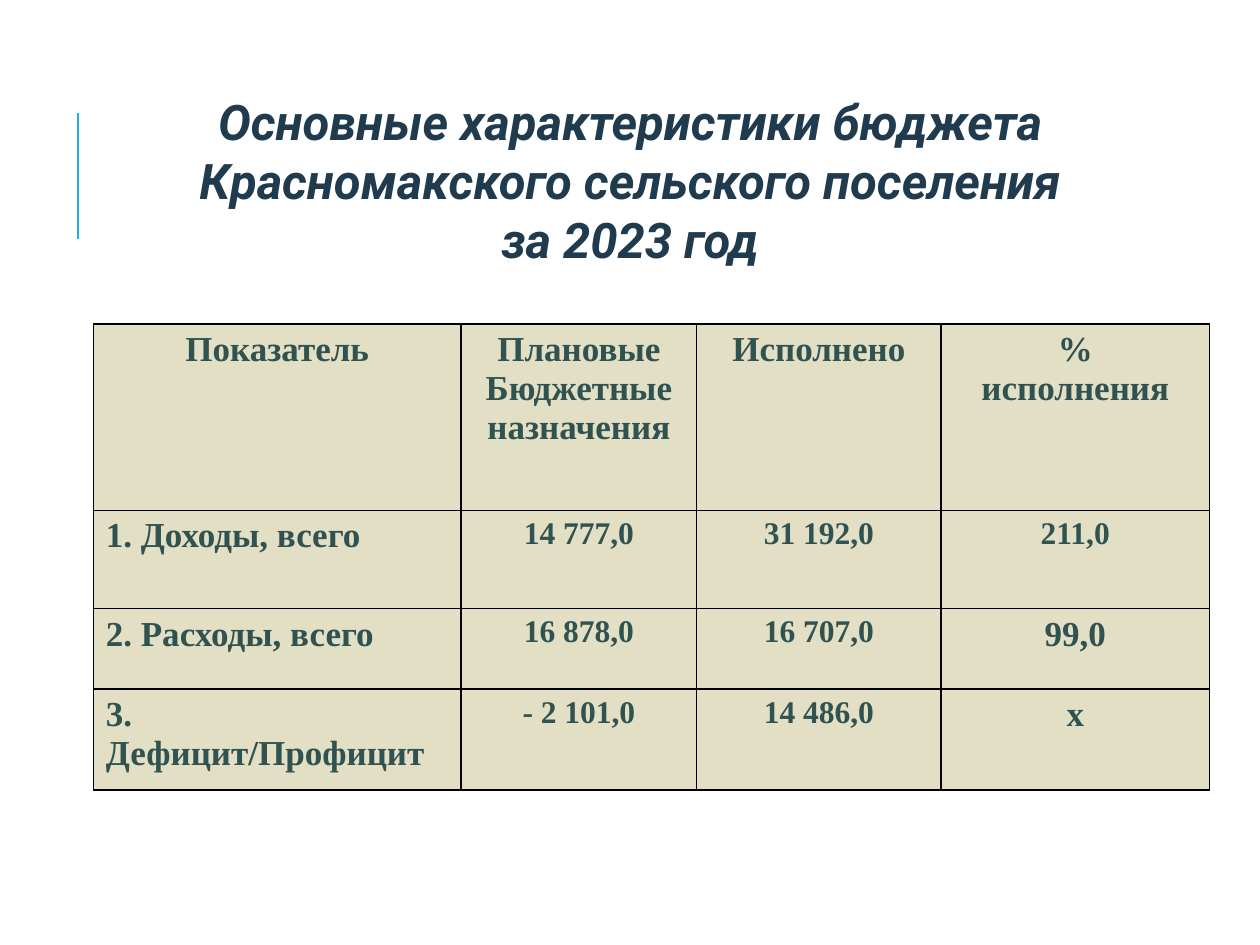
import pptx
import pptx.util
import pptx.dml.color
import pptx.enum.shapes
import pptx.enum.text
import pptx.oxml
import pptx.oxml.ns
from lxml import etree

Inches, Pt = pptx.util.Inches, pptx.util.Pt
RGBColor = pptx.dml.color.RGBColor
PP_ALIGN = pptx.enum.text.PP_ALIGN
qn = pptx.oxml.ns.qn

ACCENT = RGBColor(0x1C, 0xAD, 0xE4)
TITLE_COLOR = RGBColor(0x20, 0x3A, 0x4E)
TEXT_COLOR = RGBColor(0x30, 0x52, 0x50)
CELL_FILL = RGBColor(0xBD, 0xB8, 0x7B)
BORDER = RGBColor(0, 0, 0)

TITLE = ("Основные характеристики бюджета\n"
         "Красномакского сельского поселения\n"
         "за 2023 год")
COL_WIDTHS = [2.92, 1.87, 1.94, 2.13]
ROW_HEIGHTS = [1.48, 0.78, 0.64, 0.8]
# Each cell: text, font size
ROWS = [
    [("Показатель", 20), ("Плановые\nБюджетные назначения", 20),
     ("Исполнено", 20), ("%\nисполнения", 20)],
    [("1. Доходы, всего", 20), ("14 777,0", 18), ("31 192,0", 18), ("211,0", 18)],
    [("2. Расходы, всего", 20), ("16 878,0", 18), ("16 707,0", 18), ("99,0", 20)],
    [("3. Дефицит/Профицит", 20), ("- 2 101,0", 18), ("14 486,0", 18), ("х", 20)],
]


def write_text(tf, text, size, font, color, align, italic=False):
    tf.text = text
    tf.word_wrap = True
    for p in tf.paragraphs:
        p.alignment = align
        p.font.name = font
        p.font.size = Pt(size)
        p.font.bold = True
        p.font.italic = italic
        p.font.color.rgb = color


def add_accent_line(slide):
    s = slide.shapes.add_connector(
        pptx.enum.shapes.MSO_CONNECTOR.STRAIGHT,
        Inches(0.62), Inches(1.9), Inches(0.62), Inches(0.9))
    s.line.color.rgb = ACCENT
    s.line.width = Pt(1.5)
    etree.SubElement(s._element.spPr, qn("a:effectLst"))


def add_title(slide):
    s = slide.shapes.add_textbox(Inches(0.75), Inches(0.68), Inches(8.5), Inches(1.5))
    s.text_frame.vertical_anchor = pptx.enum.text.MSO_ANCHOR.MIDDLE
    write_text(s.text_frame, TITLE, 28, "Roboto", TITLE_COLOR, PP_ALIGN.CENTER, italic=True)


def style_cell(cell):
    # Translucent fill
    cell.fill.solid()
    cell.fill.fore_color.rgb = CELL_FILL
    tc_pr = cell._tc.get_or_add_tcPr()
    color = tc_pr.find(".//" + qn("a:srgbClr"))
    etree.SubElement(color, qn("a:alpha"), val="44000")
    # Borders come before the fill in the cell properties
    for i, side in enumerate(("lnL", "lnR", "lnT", "lnB")):
        ln = etree.Element(qn("a:" + side), w=str(Pt(0.96)))
        fill = etree.SubElement(ln, qn("a:solidFill"))
        etree.SubElement(fill, qn("a:srgbClr"), val=str(BORDER))
        tc_pr.insert(i, ln)


def add_budget_table(slide):
    table = slide.shapes.add_table(
        len(ROWS), len(COL_WIDTHS), Inches(0.74), Inches(2.57),
        Inches(sum(COL_WIDTHS)), Inches(sum(ROW_HEIGHTS))).table
    for column, width in zip(table.columns, COL_WIDTHS):
        column.width = Inches(width)
    for row, height, values in zip(table.rows, ROW_HEIGHTS, ROWS):
        row.height = Inches(height)
        for j, (cell, (text, size)) in enumerate(zip(row.cells, values)):
            is_label = j == 0 and values is not ROWS[0]
            align = PP_ALIGN.LEFT if is_label else PP_ALIGN.CENTER
            write_text(cell.text_frame, text, size, "Times New Roman", TEXT_COLOR, align)
            style_cell(cell)


def main():
    prs = pptx.Presentation()
    prs.slide_width, prs.slide_height = Inches(10), Inches(7.5)
    slide = prs.slides.add_slide(prs.slide_layouts[6])
    add_accent_line(slide)
    add_budget_table(slide)
    add_title(slide)
    prs.save("out.pptx")


if __name__ == "__main__":
    main()
